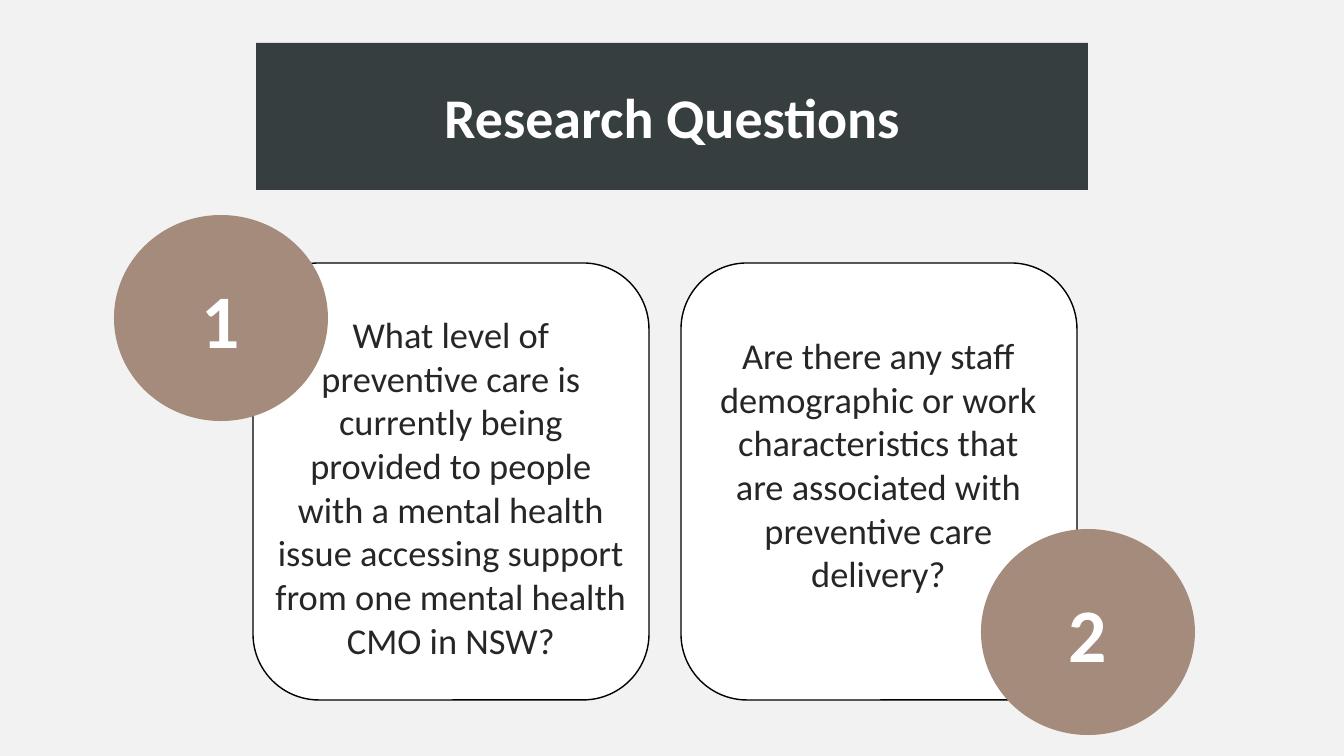
from dataclasses import dataclass
from typing import Optional

from pptx import Presentation
from pptx.dml.color import RGBColor
from pptx.enum.shapes import MSO_SHAPE
from pptx.enum.text import MSO_ANCHOR, PP_ALIGN
from pptx.util import Pt

RECT = MSO_SHAPE.RECTANGLE
ROUNDED = MSO_SHAPE.ROUNDED_RECTANGLE
OVAL = MSO_SHAPE.OVAL
CENTER = PP_ALIGN.CENTER
TOP = MSO_ANCHOR.TOP
MIDDLE = MSO_ANCHOR.MIDDLE

SLIDE_W, SLIDE_H = 1344, 756
EMU_PER_PX = 12192000 / SLIDE_W


@dataclass(frozen=True)
class Theme:
    font: str = "Calibri"
    background: str = "F2F2F2"
    banner: str = "373E40"
    badge: str = "A58B7C"
    card: str = "FFFFFF"
    outline: str = "000000"
    light_text: str = "FFFFFF"
    body_text: str = "262626"
    title_size: int = 40
    badge_size: int = 54
    body_size: int = 26
    body_leading: float = 31.2


@dataclass(frozen=True)
class Box:
    left: int
    top: int
    width: int
    height: int

    def emu(self) -> tuple[int, ...]:
        sides = (self.left, self.top, self.width, self.height)
        return tuple(round(side * EMU_PER_PX) for side in sides)


@dataclass(frozen=True)
class Question:
    number: str
    text: str
    card: Box
    text_box: Box
    badge: Box


THEME = Theme()
CARD_TOP, CARD_W, CARD_H = 263, 396, 437
BADGE_W, BADGE_H = 214, 206

QUESTIONS = (
    Question(
        "1",
        "What level of preventive care is currently being provided to people "
        "with a mental health issue accessing support from one mental health "
        "CMO in NSW?",
        Box(253, CARD_TOP, CARD_W, CARD_H),
        Box(264, 307, 374, 390),
        Box(114, 215, BADGE_W, BADGE_H),
    ),
    Question(
        "2",
        "Are there any staff demographic or work characteristics that are "
        "associated with preventive care delivery?",
        Box(681, CARD_TOP, CARD_W, CARD_H),
        Box(703, 328, 351, 370),
        Box(981, 529, BADGE_W, BADGE_H),
    ),
)


def rgb(value: str) -> RGBColor:
    return RGBColor.from_string(value)


def add_block(slide, kind, box: Box, fill: str, line: Optional[str] = None):
    sp = slide.shapes.add_shape(kind, *box.emu())
    sp.shadow.inherit = False
    sp.fill.solid()
    sp.fill.fore_color.rgb = rgb(fill)
    if line:
        sp.line.color.rgb = rgb(line)
        sp.line.width = Pt(1)
    else:
        sp.line.fill.background()
    return sp


def write(sp, text: str, size: int, color: str, anchor, bold: bool = False):
    """Fill a shape with one centred paragraph and return that paragraph."""
    tf = sp.text_frame
    tf.word_wrap = True
    tf.vertical_anchor = anchor
    tf.text = text
    p = tf.paragraphs[0]
    p.alignment = CENTER
    font = p.runs[0].font
    font.name = THEME.font
    font.size = Pt(size)
    font.bold = bold
    font.color.rgb = rgb(color)
    return p


def add_question(slide, question: Question) -> None:
    add_block(slide, ROUNDED, question.card, THEME.card, THEME.outline)
    body = slide.shapes.add_textbox(*question.text_box.emu())
    p = write(body, question.text, THEME.body_size, THEME.body_text, TOP)
    p.line_spacing = Pt(THEME.body_leading)
    badge = add_block(slide, OVAL, question.badge, THEME.badge)
    write(badge, question.number, THEME.badge_size, THEME.light_text, MIDDLE, bold=True)


def main() -> None:
    prs = Presentation()
    _, _, prs.slide_width, prs.slide_height = Box(0, 0, SLIDE_W, SLIDE_H).emu()
    slide = prs.slides.add_slide(prs.slide_layouts[6])
    slide.background.fill.solid()
    slide.background.fill.fore_color.rgb = rgb(THEME.background)

    for question in QUESTIONS:
        add_question(slide, question)

    banner = add_block(slide, RECT, Box(256, 43, 832, 147), THEME.banner)
    write(banner, "Research Questions", THEME.title_size, THEME.light_text, MIDDLE, bold=True)
    prs.save("out.pptx")


if __name__ == "__main__":
    main()
